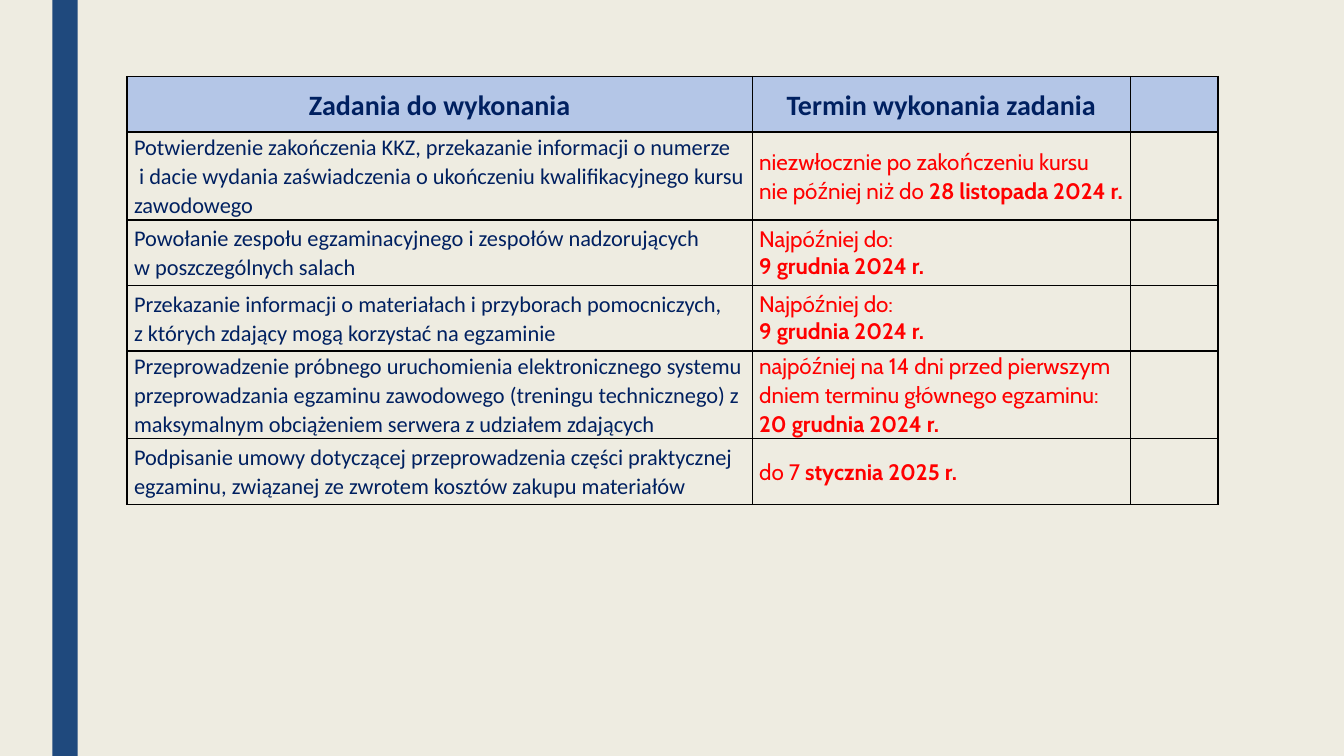
from dataclasses import dataclass

import pptx
import pptx.dml.color
import pptx.enum.shapes
import pptx.enum.text
import pptx.oxml
import pptx.oxml.ns
import pptx.util

Inches = pptx.util.Inches
Pt = pptx.util.Pt


def rgb(code):
    return pptx.dml.color.RGBColor.from_string(code)


@dataclass(frozen=True)
class Theme:
    background: str = "EEECE1"
    bar: str = "1F497D"
    header_fill: str = "B4C6E7"
    navy: str = "002060"
    red: str = "FF0000"
    border: str = "000000"
    task_font: str = "Calibri"
    date_font: str = "Cabin"
    header_size: int = 20
    body_size: int = 16
    spacing: float = 1.07


HEADERS = ["Zadania do wykonania", "Termin wykonania zadania", ""]
COLUMN_WIDTHS = [6.2, 3.75, 0.87]
ROW_HEIGHTS = [0.55, 0.83, 0.65, 0.65, 0.64, 0.65]
BY_9_DECEMBER = [("Najpóźniej do:", ""), ("", "9 grudnia 2024 r.")]
TASKS = [
    ("Potwierdzenie zakończenia KKZ, przekazanie informacji o numerze\n"
     " i dacie wydania zaświadczenia o ukończeniu kwalifikacyjnego kursu zawodowego",
     [("niezwłocznie po zakończeniu kursu", ""),
      ("nie później niż do ", "28 listopada 2024 r.")], Theme.spacing),
    ("Powołanie zespołu egzaminacyjnego i zespołów nadzorujących\n"
     "w poszczególnych salach", BY_9_DECEMBER, 1.0),
    ("Przekazanie informacji o materiałach i przyborach pomocniczych,\n"
     "z których zdający mogą korzystać na egzaminie", BY_9_DECEMBER, 1.0),
    ("Przeprowadzenie próbnego uruchomienia elektronicznego systemu "
     "przeprowadzania egzaminu zawodowego (treningu technicznego) z "
     "maksymalnym obciążeniem serwera z udziałem zdających",
     [("najpóźniej na 14 dni przed pierwszym dniem terminu głównego egzaminu:", ""),
      ("", "20 grudnia 2024 r.")], Theme.spacing),
    ("Podpisanie umowy dotyczącej przeprowadzenia części praktycznej "
     "egzaminu, związanej ze zwrotem kosztów zakupu materiałów",
     [("do 7 ", "stycznia 2025 r.")], Theme.spacing),
]


class Deck:
    def __init__(self, theme):
        self.theme = theme
        self.prs = pptx.Presentation()
        self.prs.slide_width = Inches(13.33)
        self.prs.slide_height = Inches(7.5)

    def add_slide(self):
        self.s = self.prs.slides.add_slide(self.prs.slide_layouts[6])
        fill = self.s.background.fill
        fill.solid()
        fill.fore_color.rgb = rgb(self.theme.background)

    def bar(self, left, top, width, height):
        sp = self.s.shapes.add_shape(
            pptx.enum.shapes.MSO_SHAPE.RECTANGLE,
            Inches(left), Inches(top), Inches(width), Inches(height))
        sp.shadow.inherit = False
        sp.fill.solid()
        sp.fill.fore_color.rgb = rgb(self.theme.bar)
        sp.line.fill.background()

    def table(self, left, top, widths, heights):
        table = self.s.shapes.add_table(
            len(heights), len(widths), Inches(left), Inches(top),
            Inches(sum(widths)), Inches(sum(heights))).table
        table.first_row = False
        table.horz_banding = False
        for column, width in zip(table.columns, widths):
            column.width = Inches(width)
        for row, height in zip(table.rows, heights):
            row.height = Inches(height)
        for cell in table.iter_cells():
            self.cell(cell)
        return table

    def cell(self, cell):
        cell.margin_left = cell.margin_right = Inches(0.07)
        cell.margin_top = cell.margin_bottom = 0
        cell.vertical_anchor = pptx.enum.text.MSO_ANCHOR.MIDDLE
        tc_pr = cell._tc.get_or_add_tcPr()
        for side in ("lnL", "lnR", "lnT", "lnB"):
            tc_pr.append(pptx.oxml.parse_xml(
                f'<a:{side} {pptx.oxml.ns.nsdecls("a")} w="{Pt(1)}"><a:solidFill>'
                f'<a:srgbClr val="{self.theme.border}"/></a:solidFill></a:{side}>'))
        cell.fill.background()

    def paragraph(self, p, text, font, size, color, spacing, bold=False):
        p.text = text
        p.line_spacing = spacing
        p.font.name = font
        p.font.size = Pt(size)
        p.font.bold = bold
        p.font.color.rgb = rgb(color)

    def header(self, cell, text):
        t = self.theme
        cell.fill.solid()
        cell.fill.fore_color.rgb = rgb(t.header_fill)
        if text:
            p = cell.text_frame.paragraphs[0]
            self.paragraph(p, text, t.task_font, t.header_size, t.navy, t.spacing, True)
            p.alignment = pptx.enum.text.PP_ALIGN.CENTER

    def task(self, cell, text):
        t = self.theme
        p = cell.text_frame.paragraphs[0]
        self.paragraph(p, text, t.task_font, t.body_size, t.navy, t.spacing)

    def deadline(self, cell, lines, spacing):
        t = self.theme
        tf = cell.text_frame
        for i, (plain, strong) in enumerate(lines):
            p = tf.add_paragraph() if i else tf.paragraphs[0]
            self.paragraph(p, plain, t.date_font, t.body_size, t.red, spacing)
            if strong:
                r = p.add_run()
                r.text = strong
                r.font.bold = True


def main():
    deck = Deck(Theme())
    deck.add_slide()
    deck.bar(0.52, 0, 0.25, 7.5)
    table = deck.table(1.26, 0.76, COLUMN_WIDTHS, ROW_HEIGHTS)
    for column, text in enumerate(HEADERS):
        deck.header(table.cell(0, column), text)
    for row, (task, lines, spacing) in enumerate(TASKS, start=1):
        deck.task(table.cell(row, 0), task)
        deck.deadline(table.cell(row, 1), lines, spacing)
    deck.prs.save("out.pptx")


if __name__ == "__main__":
    main()
